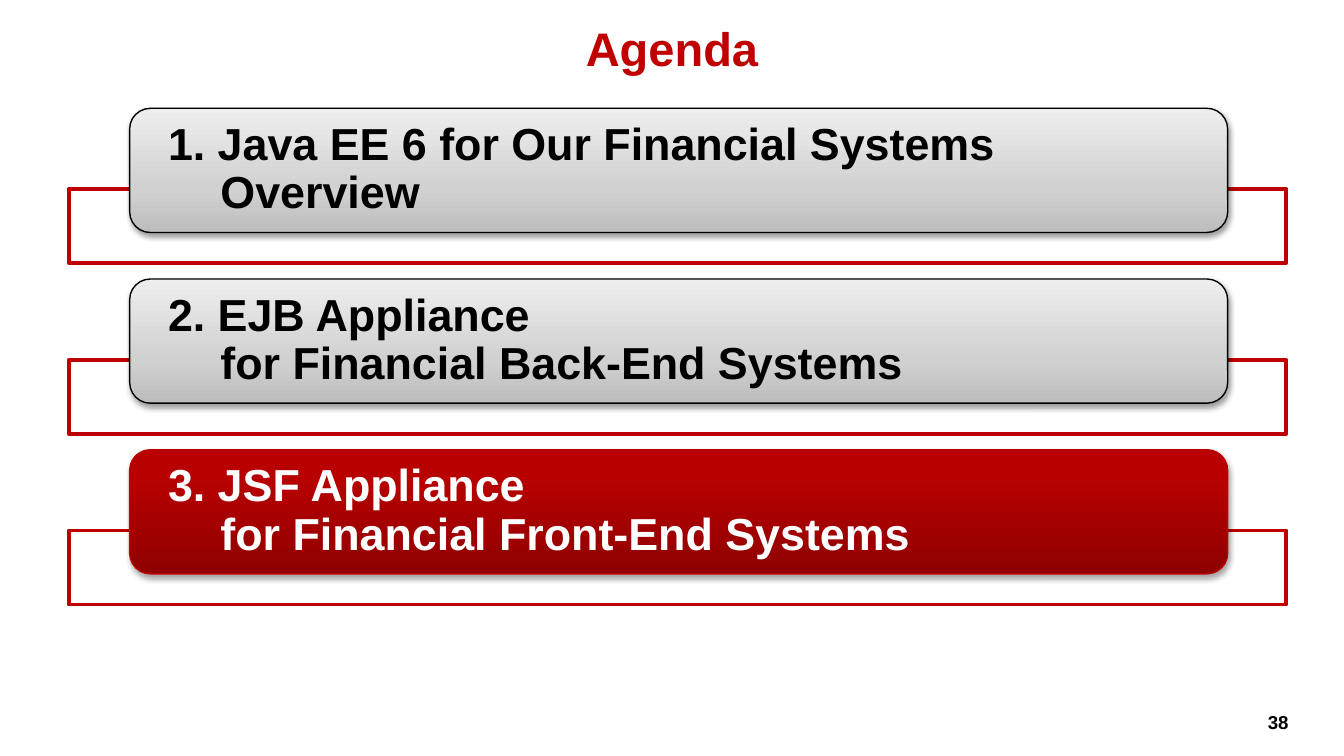
from dataclasses import dataclass

from lxml import etree
from pptx import Presentation
from pptx.dml.color import RGBColor
from pptx.enum.shapes import MSO_SHAPE
from pptx.enum.text import MSO_ANCHOR, PP_ALIGN
from pptx.oxml.ns import qn
from pptx.shapes.autoshape import Shape
from pptx.slide import Slide
from pptx.util import Inches, Length, Pt

RECTANGLE, ROUNDED = MSO_SHAPE.RECTANGLE, MSO_SHAPE.ROUNDED_RECTANGLE
MIDDLE, TOP = MSO_ANCHOR.MIDDLE, MSO_ANCHOR.TOP
LEFT, CENTER, RIGHT = PP_ALIGN.LEFT, PP_ALIGN.CENTER, PP_ALIGN.RIGHT
GRID_COLUMNS, GRID_ROWS = 100, 56.25
ITEM_PITCH = 12.7


@dataclass(frozen=True)
class Theme:
    font: str = "Arial"
    title_size: float = 25.2
    item_size: float = 24
    number_size: float = 10
    title: str = "C00000"
    frame: str = "BF0000"
    ink: str = "000000"
    paper: str = "FFFFFF"


@dataclass(frozen=True)
class Area:
    column: float
    row: float
    columns: float
    rows: float

    def below(self, rows: float) -> "Area":
        return Area(self.column, self.row + rows, self.columns, self.rows)

    def lengths(self) -> list[Length]:
        return [Inches(cells / 10) for cells in (self.column, self.row, self.columns, self.rows)]


@dataclass(frozen=True)
class BarStyle:
    gradient: tuple[tuple[int, str], ...]
    outline: str
    text: str
    shadow_alpha: int
    shadow_distance: float


@dataclass(frozen=True)
class AgendaItem:
    text: str
    style: BarStyle


THEME = Theme()
TITLE_AREA = Area(3.95, 2.05, 92.1, 3)
NUMBER_AREA = Area(93.15, 52.4, 3.7, 2.7)
FRAME_AREA = Area(5.12, 14.08, 90.6, 5.5)
BAR_AREA = Area(9.65, 8.06, 81.7, 9.24)
LABEL_AREA = Area(10.1, 8.52, 80.8, 8.3)
UPCOMING = BarStyle(((0, "BDBDBD"), (35, "D1D1D1"), (100, "EEEEEE")), THEME.ink, THEME.ink, 38, 1.6)
CURRENT = BarStyle(((0, "8F0000"), (80, "B90000"), (100, "BA0000")), "BB0000", THEME.paper, 35, 1.8)
AGENDA = (
    AgendaItem("1. Java EE 6 for Our Financial Systems Overview", UPCOMING),
    AgendaItem("2. EJB Appliance\nfor Financial Back-End Systems", UPCOMING),
    AgendaItem("3. JSF Appliance\nfor Financial Front-End Systems", CURRENT),
)


def add_color(parent: etree._Element, color: str, alpha: int = 100) -> None:
    """Append a colour with an opacity in percent to an XML element."""
    value = etree.SubElement(parent, qn("a:srgbClr"), val=color)
    etree.SubElement(value, qn("a:alpha"), val=str(alpha * 1000))


def add_outlined(slide: Slide, preset: MSO_SHAPE, area: Area, color: str, width: float) -> Shape:
    """Add a preset shape with a plain outline and no inherited shadow."""
    shape = slide.shapes.add_shape(preset, *area.lengths())
    shape.shadow.inherit = False
    shape.line.color.rgb = RGBColor.from_string(color)
    shape.line.width = Pt(width)
    return shape


def add_frame(slide: Slide, area: Area) -> None:
    """Add the red frame that sits behind an agenda bar."""
    frame = add_outlined(slide, RECTANGLE, area, THEME.frame, 2)
    frame.fill.solid()
    frame.fill.fore_color.rgb = RGBColor.from_string(THEME.paper)
    tint = frame.element.spPr.find(qn("a:solidFill")).find(qn("a:srgbClr"))
    etree.SubElement(tint, qn("a:alpha"), val="90000")


def add_bar(slide: Slide, area: Area, style: BarStyle) -> None:
    """Add a rounded bar with a vertical gradient and a soft shadow."""
    bar = add_outlined(slide, ROUNDED, area, style.outline, 0.75)
    bar.fill.gradient()
    bar.fill.gradient_angle = 90
    properties = bar.element.spPr
    stops = properties.find(qn("a:gradFill")).find(qn("a:gsLst"))
    for stop in list(stops):
        stops.remove(stop)
    for position, color in style.gradient:
        add_color(etree.SubElement(stops, qn("a:gs"), pos=str(position * 1000)), color)
    shadow = etree.SubElement(
        properties.find(qn("a:effectLst")), qn("a:outerShdw"),
        blurRad=str(Pt(3.1)), dist=str(Pt(style.shadow_distance)), dir="5400000", rotWithShape="0",
    )
    add_color(shadow, THEME.ink, style.shadow_alpha)


def add_text(slide: Slide, area: Area, text: str, size: float, color: str, align: PP_ALIGN,
             anchor: MSO_ANCHOR = MIDDLE, side_inset: float = 0.1, top_inset: float = 0) -> Shape:
    """Add a bold text box holding one paragraph."""
    box = slide.shapes.add_textbox(*area.lengths())
    frame = box.text_frame
    frame.word_wrap = True
    frame.vertical_anchor = anchor
    frame.margin_left = frame.margin_right = Inches(side_inset)
    frame.margin_top = frame.margin_bottom = Inches(top_inset)
    paragraph = frame.paragraphs[0]
    paragraph.text = text
    paragraph.alignment = align
    for run in paragraph.runs:
        run.font.name = THEME.font
        run.font.size = Pt(size)
        run.font.bold = True
        run.font.color.rgb = RGBColor.from_string(color)
    return box


def add_item(slide: Slide, index: int, item: AgendaItem) -> None:
    """Add one agenda entry: frame, bar and hanging label."""
    offset = index * ITEM_PITCH
    add_frame(slide, FRAME_AREA.below(offset))
    add_bar(slide, BAR_AREA.below(offset), item.style)
    label = add_text(slide, LABEL_AREA.below(offset), item.text, THEME.item_size,
                     item.style.text, LEFT, side_inset=0.24)
    paragraph = label.text_frame.paragraphs[0]
    paragraph.line_spacing = 0.9
    indent = paragraph._p.get_or_add_pPr()
    indent.set("marL", str(Inches(0.39)))
    indent.set("indent", str(-Inches(0.39)))


def main() -> None:
    """Build the agenda slide and save it."""
    deck = Presentation()
    deck.slide_width = Inches(GRID_COLUMNS / 10)
    deck.slide_height = Inches(GRID_ROWS / 10)
    slide = deck.slides.add_slide(deck.slide_layouts[6])
    add_text(slide, NUMBER_AREA, "38", THEME.number_size, THEME.ink, RIGHT, TOP, top_inset=0.05)
    add_text(slide, TITLE_AREA, "Agenda", THEME.title_size, THEME.title, CENTER)
    for index, item in enumerate(AGENDA):
        add_item(slide, index, item)
    deck.save("out.pptx")


if __name__ == "__main__":
    main()
